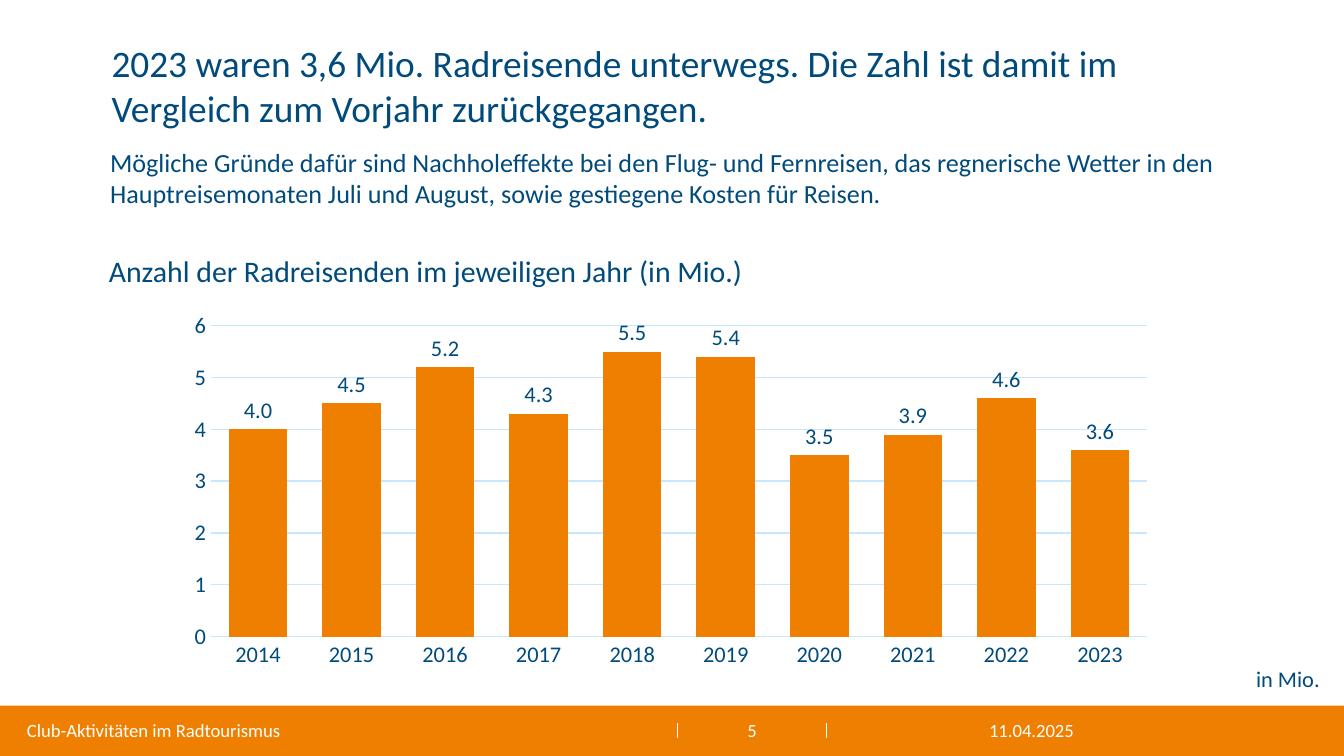
from lxml import etree
from pptx import Presentation
from pptx.chart.data import CategoryChartData
from pptx.dml.color import RGBColor
from pptx.enum.chart import XL_CHART_TYPE, XL_LABEL_POSITION, XL_TICK_MARK
from pptx.enum.shapes import MSO_CONNECTOR, MSO_SHAPE
from pptx.enum.text import MSO_ANCHOR, MSO_AUTO_SIZE, PP_ALIGN
from pptx.oxml.ns import qn
from pptx.util import Inches, Pt

LEFT, CENTER, RIGHT = PP_ALIGN.LEFT, PP_ALIGN.CENTER, PP_ALIGN.RIGHT
TOP, MIDDLE = MSO_ANCHOR.TOP, MSO_ANCHOR.MIDDLE
NO_TICK = XL_TICK_MARK.NONE
OUTSIDE_END = XL_LABEL_POSITION.OUTSIDE_END

SLIDE_WIDTH = 10
SLIDE_HEIGHT = SLIDE_WIDTH * 9 / 16
FOOTER_TOP = 5.25

FONT = "Calibri"
BLUE, PALE_BLUE, ORANGE, WHITE = "004B7C", "C5E8FF", "EE7F00", "FFFFFF"

TRAVELLERS = {
    "2014": 4.0, "2015": 4.5, "2016": 5.2, "2017": 4.3, "2018": 5.5,
    "2019": 5.4, "2020": 3.5, "2021": 3.9, "2022": 4.6, "2023": 3.6,
}


def rgb(color):
    return RGBColor.from_string(color)


def set_all(target, values):
    for name, value in values.items():
        setattr(target, name, value)


class SlideBuilder:
    """Holds the house style and the slide being filled."""

    def __init__(self, slide):
        self.slide = slide

    def style_font(self, font, size, color=BLUE):
        set_all(font, {"name": FONT, "size": Pt(size), "bold": False})
        font.color.rgb = rgb(color)

    def style_line(self, line, color, width):
        line.color.rgb = rgb(color)
        line.width = Pt(width)

    def fill_frame(self, frame, text, size, color=BLUE, align=LEFT, anchor=TOP,
                   inset_x=0, inset_y=0):
        set_all(frame, {
            "word_wrap": True, "auto_size": MSO_AUTO_SIZE.NONE,
            "vertical_anchor": anchor,
            "margin_left": Inches(inset_x), "margin_right": Inches(inset_x),
            "margin_top": Inches(inset_y), "margin_bottom": Inches(inset_y),
        })
        frame.text = text
        paragraph = frame.paragraphs[0]
        set_all(paragraph, {"alignment": align, "space_before": Pt(0)})
        self.style_font(paragraph.runs[0].font, size, color)
        return paragraph

    def placeholder(self, index, box, text, size):
        holder = self.slide.placeholders[index]
        set_all(holder, dict(zip(("left", "top", "width", "height"),
                                 map(Inches, box))))
        return self.fill_frame(holder.text_frame, text, size)

    def title(self, box, text, size):
        self.placeholder(0, box, text, size)

    def body(self, box, text, size):
        """Fill the body placeholder with one unbulleted line."""
        properties = self.placeholder(1, box, text, size)._p.get_or_add_pPr()
        properties.set("marL", "0")
        properties.set("indent", "0")
        etree.SubElement(properties, qn("a:buNone"))

    def text(self, box, text, size, **style):
        textbox = self.slide.shapes.add_textbox(*map(Inches, box))
        self.fill_frame(textbox.text_frame, text, size, **style)

    def bar(self, box, color):
        bar = self.slide.shapes.add_shape(MSO_SHAPE.RECTANGLE, *map(Inches, box))
        bar.shadow.inherit = False
        bar.fill.solid()
        bar.fill.fore_color.rgb = rgb(color)
        bar.line.fill.background()

    def divider(self, x, top, bottom, color):
        divider = self.slide.shapes.add_connector(
            MSO_CONNECTOR.STRAIGHT, *map(Inches, (x, top, x, bottom)))
        self.style_line(divider.line, color, 0.5)
        etree.SubElement(divider._element.spPr, qn("a:effectLst"))

    def column_chart(self, box, values_by_year):
        data = CategoryChartData(number_format="#,##0.0")
        data.categories = list(values_by_year)
        data.add_series("Series 1", list(values_by_year.values()))
        chart = self.slide.shapes.add_chart(
            XL_CHART_TYPE.COLUMN_CLUSTERED, *map(Inches, box), data).chart
        set_all(chart, {"has_legend": False, "has_title": False})
        self.style_font(chart.font, 10)

        year_axis, count_axis = chart.category_axis, chart.value_axis
        for axis in (year_axis, count_axis):
            set_all(axis, {"major_tick_mark": NO_TICK, "minor_tick_mark": NO_TICK})
            self.style_font(axis.tick_labels.font, 12)
        self.style_line(year_axis.format.line, PALE_BLUE, 0.75)
        set_all(count_axis, {"minimum_scale": 0, "maximum_scale": 6,
                             "major_unit": 1, "has_major_gridlines": True})
        count_axis.format.line.fill.background()
        self.style_line(count_axis.major_gridlines.format.line, PALE_BLUE, 0.75)
        set_all(count_axis.tick_labels, {"number_format": "0",
                                         "number_format_is_linked": False})

        plot = chart.plots[0]
        set_all(plot, {"gap_width": 60, "vary_by_categories": False})
        columns = plot.series[0]
        columns.format.fill.solid()
        columns.format.fill.fore_color.rgb = rgb(ORANGE)
        set_all(columns.data_labels, {
            "show_value": True, "position": OUTSIDE_END,
            "number_format": "#,##0.0", "number_format_is_linked": False,
        })
        self.style_font(columns.data_labels.font, 12)


def main():
    deck = Presentation()
    set_all(deck, {"slide_width": Inches(SLIDE_WIDTH),
                   "slide_height": Inches(SLIDE_HEIGHT)})
    builder = SlideBuilder(deck.slides.add_slide(deck.slide_layouts[1]))

    builder.bar((0, FOOTER_TOP, SLIDE_WIDTH, SLIDE_HEIGHT - FOOTER_TOP), ORANGE)
    for x in (5.04, 6.15):
        builder.divider(x, 5.38, 5.49, WHITE)
    footer = {"size": 10, "color": WHITE, "anchor": MIDDLE}
    builder.text((0.2, 5.35, 4.72, 0.16), "Club-Aktivitäten im Radtourismus", **footer)
    builder.text((5.04, 5.35, 1.11, 0.16), "5", align=CENTER, **footer)
    builder.text((7.28, 5.35, 0.71, 0.16), "11.04.2025", align=RIGHT, **footer)

    builder.title(
        (0.83, 0.3, 8.35, 0.66),
        "2023 waren 3,6 Mio. Radreisende unterwegs. "
        "Die Zahl ist damit im Vergleich zum Vorjahr zurückgegangen.", 20)
    builder.text(
        (0.72, 1.04, 8.45, 0.81),
        "Mögliche Gründe dafür sind Nachholeffekte bei den Flug- und Fernreisen, "
        "das regnerische Wetter in den Hauptreisemonaten Juli und August, "
        "sowie gestiegene Kosten für Reisen.", 14, inset_x=0.1, inset_y=0.05)
    builder.body((0.81, 1.88, 8.35, 0.39),
                 "Anzahl der Radreisenden im jeweiligen Jahr (in Mio.)", 16)
    builder.column_chart((1.3, 2.27, 7.38, 2.76), TRAVELLERS)
    builder.text((7.28, 4.95, 2.54, 0.24), "in Mio.", 12, align=RIGHT)

    deck.save("out.pptx")


if __name__ == "__main__":
    main()
